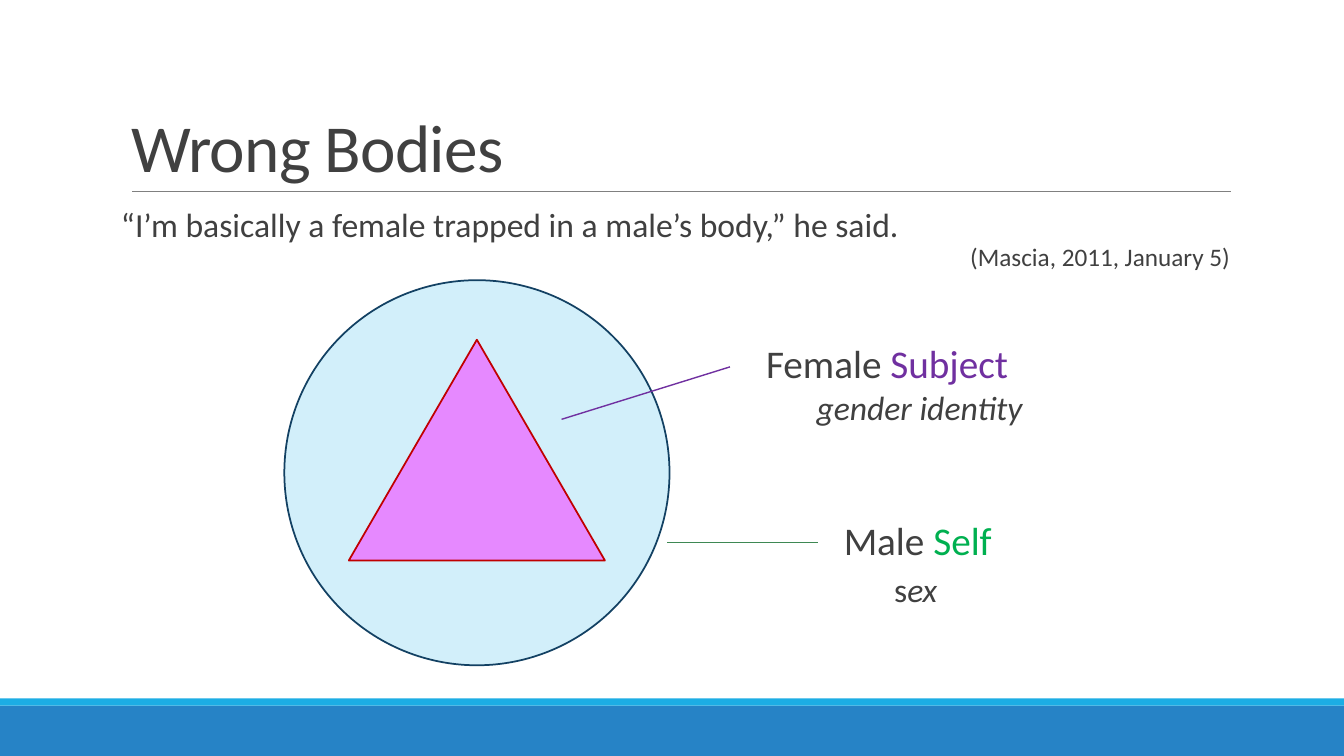
import pptx
import pptx.util
import pptx.dml.color
import pptx.enum.shapes
import pptx.enum.text
import pptx.oxml

Inches, Pt = pptx.util.Inches, pptx.util.Pt
RGB = pptx.dml.color.RGBColor
Kind = pptx.enum.shapes.MSO_SHAPE
Link = pptx.enum.shapes.MSO_CONNECTOR
Align = pptx.enum.text.PP_ALIGN
Anchor = pptx.enum.text.MSO_ANCHOR
Fit = pptx.enum.text.MSO_AUTO_SIZE

INK = RGB(0x40, 0x40, 0x40)
GRAY = RGB(0x80, 0x80, 0x80)
BLUE = RGB(0x26, 0x83, 0xC6)
CYAN = RGB(0x1C, 0xAD, 0xE4)
PALE = RGB(0xD2, 0xEF, 0xFA)
NAVY = RGB(0x13, 0x41, 0x63)
PINK = RGB(0xE6, 0x89, 0xFF)
RED = RGB(0xC0, 0x00, 0x00)
PURPLE = RGB(0x70, 0x30, 0xA0)
LIME = RGB(0x00, 0xB0, 0x50)
GREEN = RGB(0x3E, 0x88, 0x53)

# Content: paragraphs are lists of (text, size, colour, italic)
TITLE = [[("Wrong Bodies", 48, INK, False)]]
QUOTE = [
    [("“I’m basically a female trapped in a male’s body,” he said.", 24, INK, False)],
    [("(Mascia, 2011, January 5)", 18, INK, False)],
]
LABELS = [
    ((7.5, 3.32, 3.28, 0.98), [
        [("Female ", 28, INK, False), ("Subject", 28, PURPLE, False)],
        [("\tgender identity", 24, INK, True)],
    ]),
    ((8.27, 5.07, 1.68, 1.04), [
        [("Male ", 28, INK, False), ("Self", 28, LIME, False)],
        [("\t", 28, INK, False), ("s", 24, INK, False), ("ex", 24, INK, True)],
    ]),
]
SHAPES = [
    (Kind.RECTANGLE, (0, 7, 13.33, 0.5), BLUE, None),
    (Kind.RECTANGLE, (0, 6.93, 13.33, 0.07), CYAN, None),
    (Kind.OVAL, (2.82, 2.78, 3.82, 3.82), PALE, NAVY),
    (Kind.ISOSCELES_TRIANGLE, (3.46, 3.37, 2.54, 2.19), PINK, RED),
]
LINES = [
    ((1.31, 1.9, 12.21, 1.9), GRAY, 0.5),
    ((5.57, 4.16, 7.24, 3.64), PURPLE, 1),
    ((6.62, 5.38, 8.11, 5.38), GREEN, 1),
]


def scale(box):
    return [Inches(n) for n in box]


def apply(item, form):
    for name, value in form.items():
        setattr(item, name, value)


def write(frame, paras, form, space=1.0):
    apply(frame, form)
    for i, runs in enumerate(paras):
        para = frame.paragraphs[0] if i == 0 else frame.add_paragraph()
        apply(para, {"alignment": Align.LEFT, "line_spacing": space})
        for text, size, color, slant in runs:
            run = para.add_run()
            run.text = text
            apply(run.font, {"name": "Calibri", "size": Pt(size), "italic": slant})
            run.font.color.rgb = color


deck = pptx.Presentation()
apply(deck, {"slide_width": Inches(13.33), "slide_height": Inches(7.5)})
slide = deck.slides.add_slide(deck.slide_layouts[5])
parts = slide.shapes

# Title
title = parts.title
apply(title, dict(zip(("left", "top", "width", "height"), scale((1.2, 0.31, 11, 1.59)))))
write(title.text_frame, TITLE,
      {"vertical_anchor": Anchor.BOTTOM, "word_wrap": True, "auto_size": Fit.NONE}, 0.85)
title.text_frame.paragraphs[0].runs[0].font._element.set("spc", "-50")

# Quotation
quote = parts.add_textbox(*scale((1.2, 2.02, 11, 1))).text_frame
write(quote, QUOTE, {"word_wrap": True, "margin_left": 0, "margin_right": 0}, 0.9)
quote.paragraphs[1].alignment = Align.RIGHT

# Bands, circle and triangle
for kind, box, fill, edge in SHAPES:
    shape = parts.add_shape(kind, *scale(box))
    shape.shadow.inherit = False
    shape.fill.solid()
    shape.fill.fore_color.rgb = fill
    if edge is None:
        shape.line.fill.background()
    else:
        shape.line.color.rgb = edge
        shape.line.width = Pt(1.25)

# Labels
for box, paras in LABELS:
    label = parts.add_textbox(*scale(box)).text_frame
    write(label, paras, {"word_wrap": False, "auto_size": Fit.SHAPE_TO_FIT_TEXT})

# Title rule and pointers
for ends, color, width in LINES:
    line = parts.add_connector(Link.STRAIGHT, *scale(ends))
    line.line.color.rgb = color
    line.line.width = Pt(width)
    props = line._element.spPr
    props.append(pptx.oxml.parse_xml(
        '<a:effectLst xmlns:a="http://schemas.openxmlformats.org/drawingml/2006/main"/>'))

deck.save("out.pptx")
